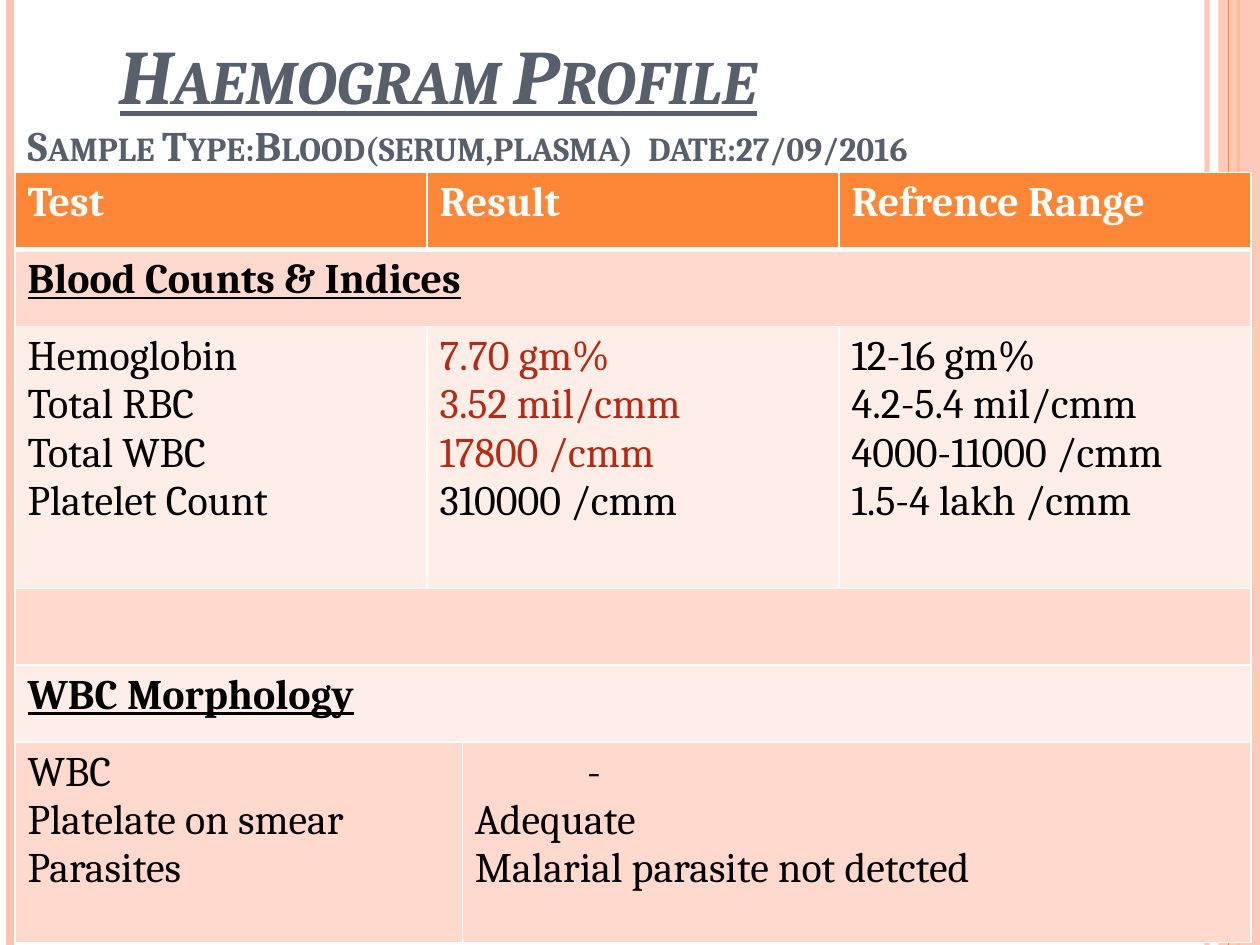
from lxml import etree
from pptx import Presentation
from pptx.dml.color import RGBColor
from pptx.enum.shapes import MSO_CONNECTOR, MSO_SHAPE
from pptx.enum.text import MSO_ANCHOR, PP_ALIGN
from pptx.oxml.ns import qn
from pptx.util import Inches, Pt

STRAIGHT = MSO_CONNECTOR.STRAIGHT
RECTANGLE = MSO_SHAPE.RECTANGLE
BOTTOM = MSO_ANCHOR.BOTTOM
LEFT = PP_ALIGN.LEFT

FONT = "Cambria"
WHITE = RGBColor(0xFF, 0xFF, 0xFF)
BLACK = RGBColor(0x00, 0x00, 0x00)
SLATE = RGBColor(0x57, 0x5F, 0x6D)
ORANGE = RGBColor(0xFE, 0x86, 0x37)
PEACH = RGBColor(0xFE, 0xC3, 0xAE)
DARK_BAND = RGBColor(0xFF, 0xD9, 0xCE)
LIGHT_BAND = RGBColor(0xFF, 0xED, 0xE8)
RED = RGBColor(0xB3, 0x2C, 0x16)

SLIDE_WIDTH, SLIDE_HEIGHT = 10, 7.5
COLUMN_WIDTHS = [3.27, 0.28, 2.99, 3.27]
ROW_HEIGHTS = [0.61, 0.61, 2.08, 0.61, 0.61, 1.59]
ROW_FILLS = [ORANGE, DARK_BAND, LIGHT_BAND, DARK_BAND, LIGHT_BAND, DARK_BAND]
HEADER = {"bold": True, "color": WHITE}
SECTION = {"bold": True, "underline": True}

# Each cell: row, first column, last column, lines, text format
CELLS = [
    (0, 0, 0, ["Test"], HEADER),
    (0, 1, 2, ["Result"], HEADER),
    (0, 3, 3, ["Refrence Range"], HEADER),
    (1, 0, 3, ["Blood Counts & Indices"], SECTION),
    (2, 0, 0, ["Hemoglobin", "Total RBC", "Total WBC", "Platelet Count"], {}),
    (2, 1, 2, ["7.70 gm%", "3.52 mil/cmm", "17800 /cmm", "310000 /cmm"], {}),
    (2, 3, 3, ["12-16 gm%", "4.2-5.4 mil/cmm", "4000-11000 /cmm", "1.5-4 lakh /cmm"], {}),
    (3, 0, 3, [], {}),
    (4, 0, 3, ["WBC Morphology"], SECTION),
    (5, 0, 1, ["WBC", "Platelate on smear", "Parasites"], {}),
    (5, 2, 3, ["-", "Adequate", "Malarial parasite not detcted"], {}),
]
ABNORMAL_RESULTS = {"7.70 gm%", "3.52 mil/cmm", "17800 /cmm"}


def add_text(text_frame, text, size=24, color=BLACK, bold=False, italic=False,
             underline=False, small_caps=False, indent=0):
    """Write text as the next paragraph, filling the first one if it is empty."""
    paragraph = text_frame.paragraphs[-1]
    if paragraph.runs:
        paragraph = text_frame.add_paragraph()
    paragraph.alignment = LEFT
    run = paragraph.add_run()
    run.text = text
    font = run.font
    font.name, font.size, font.color.rgb = FONT, Pt(size), color
    font.bold, font.italic, font.underline = bold, italic, underline
    if small_caps:
        run._r.get_or_add_rPr().set("cap", "small")
    if indent:
        paragraph._p.get_or_add_pPr().set("indent", str(Inches(indent)))


def set_opacity(element, percent):
    color = element.find(".//" + qn("a:srgbClr"))
    etree.SubElement(color, qn("a:alpha")).set("val", str(percent * 1000))


def add_vertical_line(slide, x, color, width, opacity=100):
    line = slide.shapes.add_connector(
        STRAIGHT, Inches(x), 0, Inches(x), Inches(SLIDE_HEIGHT))
    line.line.color.rgb = color
    line.line.width = Pt(width)
    set_opacity(line._element.spPr, opacity)
    etree.SubElement(line._element.spPr, qn("a:effectLst"))


def add_side_stripes(slide):
    add_vertical_line(slide, 9.58, PEACH, 3, opacity=93)
    add_vertical_line(slide, 0.08, PEACH, 4.5)
    add_vertical_line(slide, 9.83, ORANGE, 1.5)
    band = slide.shapes.add_shape(
        RECTANGLE, Inches(9.67), 0, Inches(0.33), Inches(SLIDE_HEIGHT))
    band.shadow.inherit = False
    band.fill.solid()
    band.fill.fore_color.rgb = PEACH
    band.line.fill.background()
    set_opacity(band._element.spPr, 87)
    add_vertical_line(slide, 9.75, ORANGE, 0.75)


def add_title(slide, left, top, width, height):
    title = slide.shapes.title
    title.left, title.top = Inches(left), Inches(top)
    title.width, title.height = Inches(width), Inches(height)
    text_frame = title.text_frame
    text_frame.vertical_anchor = BOTTOM
    text_frame.word_wrap = True
    add_text(text_frame, "Haemogram Profile", size=44, color=SLATE, bold=True,
             italic=True, underline=True, small_caps=True, indent=0.73)
    add_text(text_frame, "Sample Type:Blood(serum,plasma)  date:27/09/2016",
             color=SLATE, bold=True, small_caps=True)


def set_borders(cell, top, bottom):
    """Draw white borders, with top and bottom widths in points."""
    properties = cell._tc.get_or_add_tcPr()
    for side, width in (("L", 1), ("R", 1), ("T", top), ("B", bottom)):
        border = etree.SubElement(properties, qn(f"a:ln{side}"), w=str(Pt(width)))
        fill = etree.SubElement(border, qn("a:solidFill"))
        etree.SubElement(fill, qn("a:srgbClr"), val=str(WHITE))


def add_results_table(slide, left, top, width, height):
    table = slide.shapes.add_table(
        len(ROW_HEIGHTS), len(COLUMN_WIDTHS), Inches(left), Inches(top),
        Inches(width), Inches(height)).table
    for column, column_width in zip(table.columns, COLUMN_WIDTHS):
        column.width = Inches(column_width)
    for index, row in enumerate(table.rows):
        row.height = Inches(ROW_HEIGHTS[index])
        for cell in row.cells:
            set_borders(cell, top=3 if index == 1 else 1, bottom=3 if index == 0 else 1)
            cell.fill.solid()
            cell.fill.fore_color.rgb = ROW_FILLS[index]
    for row, first, last, lines, text_format in CELLS:
        cell = table.cell(row, first)
        if last > first:
            cell.merge(table.cell(row, last))
        for line in lines:
            line_format = dict(text_format)
            if line in ABNORMAL_RESULTS:
                line_format["color"] = RED
            if line == "-":
                line_format["indent"] = 0.89
            add_text(cell.text_frame, line, **line_format)


def main():
    presentation = Presentation()
    presentation.slide_width = Inches(SLIDE_WIDTH)
    presentation.slide_height = Inches(SLIDE_HEIGHT)
    slide = presentation.slides.add_slide(presentation.slide_layouts[5])
    add_side_stripes(slide)
    add_title(slide, 0.12, 0.15, 9.29, 1.25)
    add_results_table(slide, 0.12, 1.37, sum(COLUMN_WIDTHS), sum(ROW_HEIGHTS))
    presentation.save("out.pptx")


if __name__ == "__main__":
    main()
